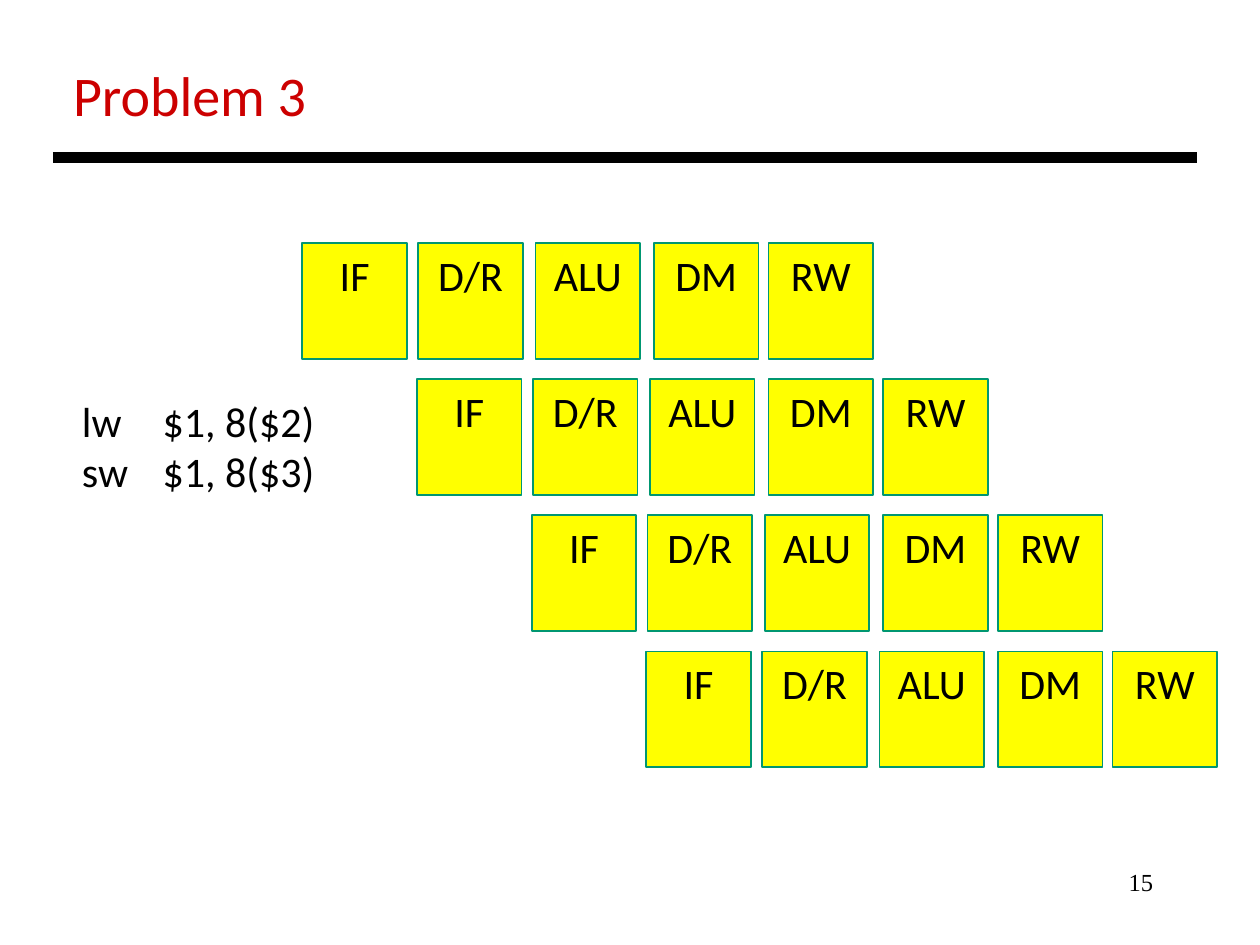
from dataclasses import dataclass

from lxml import etree
from pptx import Presentation
from pptx.dml.color import RGBColor
from pptx.enum.shapes import MSO_CONNECTOR, MSO_SHAPE
from pptx.enum.text import MSO_ANCHOR, PP_ALIGN
from pptx.oxml.ns import qn
from pptx.util import Inches, Pt

LEFT, CENTER, RIGHT = PP_ALIGN.LEFT, PP_ALIGN.CENTER, PP_ALIGN.RIGHT
TOP, MIDDLE = MSO_ANCHOR.TOP, MSO_ANCHOR.MIDDLE
RECTANGLE, STRAIGHT = MSO_SHAPE.RECTANGLE, MSO_CONNECTOR.STRAIGHT
TITLE_ONLY = 5


@dataclass(frozen=True)
class Theme:
    title: RGBColor = RGBColor(0xCC, 0x00, 0x00)
    ink: RGBColor = RGBColor(0x00, 0x00, 0x00)
    stage_fill: RGBColor = RGBColor(0xFF, 0xFF, 0x00)
    stage_line: RGBColor = RGBColor(0x00, 0x97, 0x71)
    font: str = "Calibri"
    number_font: str = "Times New Roman"
    title_size: Pt = Pt(32)
    body_size: Pt = Pt(24)
    number_size: Pt = Pt(14)


theme = Theme()


def style(paragraph, size, color=theme.ink, font=theme.font, align=LEFT):
    paragraph.alignment = align
    paragraph.font.name = font
    paragraph.font.size = size
    paragraph.font.color.rgb = color


prs = Presentation()
prs.slide_width, prs.slide_height = Inches(10), Inches(7.5)
slide = prs.slides.add_slide(prs.slide_layouts[TITLE_ONLY])

# Title and the rule below it
title = slide.shapes.title
title.left, title.top = Inches(0.48), Inches(0.43)
title.width, title.height = Inches(9), Inches(0.64)
title.text_frame.text = "Problem 3"
title.text_frame.vertical_anchor = MIDDLE
style(title.text_frame.paragraphs[0], theme.title_size, theme.title)

rule = slide.shapes.add_connector(
    STRAIGHT, Inches(0.42), Inches(1.25), Inches(9.5), Inches(1.25))
rule.line.color.rgb = theme.ink
rule.line.width = Pt(6)
etree.SubElement(rule._element.spPr, qn("a:effectLst"))

# Pipeline: each instruction starts one stage after the one above
stages = {"IF": 0, "D/R": 0.92, "ALU": 1.85, "DM": 2.79, "RW": 3.7}
for instruction in range(4):
    start = 2.4 + 0.91 * instruction
    top = 1.93 + 1.08 * instruction
    for label, offset in stages.items():
        stage = slide.shapes.add_shape(
            RECTANGLE, Inches(start + offset), Inches(top), Inches(0.83), Inches(0.92))
        stage.shadow.inherit = False
        stage.fill.solid()
        stage.fill.fore_color.rgb = theme.stage_fill
        stage.line.color.rgb = theme.stage_line
        stage.line.width = Pt(1)
        stage.text_frame.text = label
        stage.text_frame.vertical_anchor = TOP
        style(stage.text_frame.paragraphs[0], theme.body_size, align=CENTER)

# Instructions, with the operands at a tab stop
code = slide.shapes.add_textbox(
    Inches(0.48), Inches(3.09), Inches(2.18), Inches(0.91)).text_frame
code.word_wrap = True
code.margin_left = Inches(0.17)
code.text = "lw\t$1, 8($2)\nsw\t$1, 8($3)"
for line in code.paragraphs:
    tabs = etree.SubElement(line._p.get_or_add_pPr(), qn("a:tabLst"))
    etree.SubElement(tabs, qn("a:tab"), pos=str(Inches(0.64)), algn="l")
    style(line, theme.body_size)

# Slide number
number = slide.shapes.add_textbox(
    Inches(7.17), Inches(6.83), Inches(2.08), Inches(0.5)).text_frame
number.word_wrap = True
number.text = "15"
style(number.paragraphs[0], theme.number_size, font=theme.number_font, align=RIGHT)

prs.save("out.pptx")
